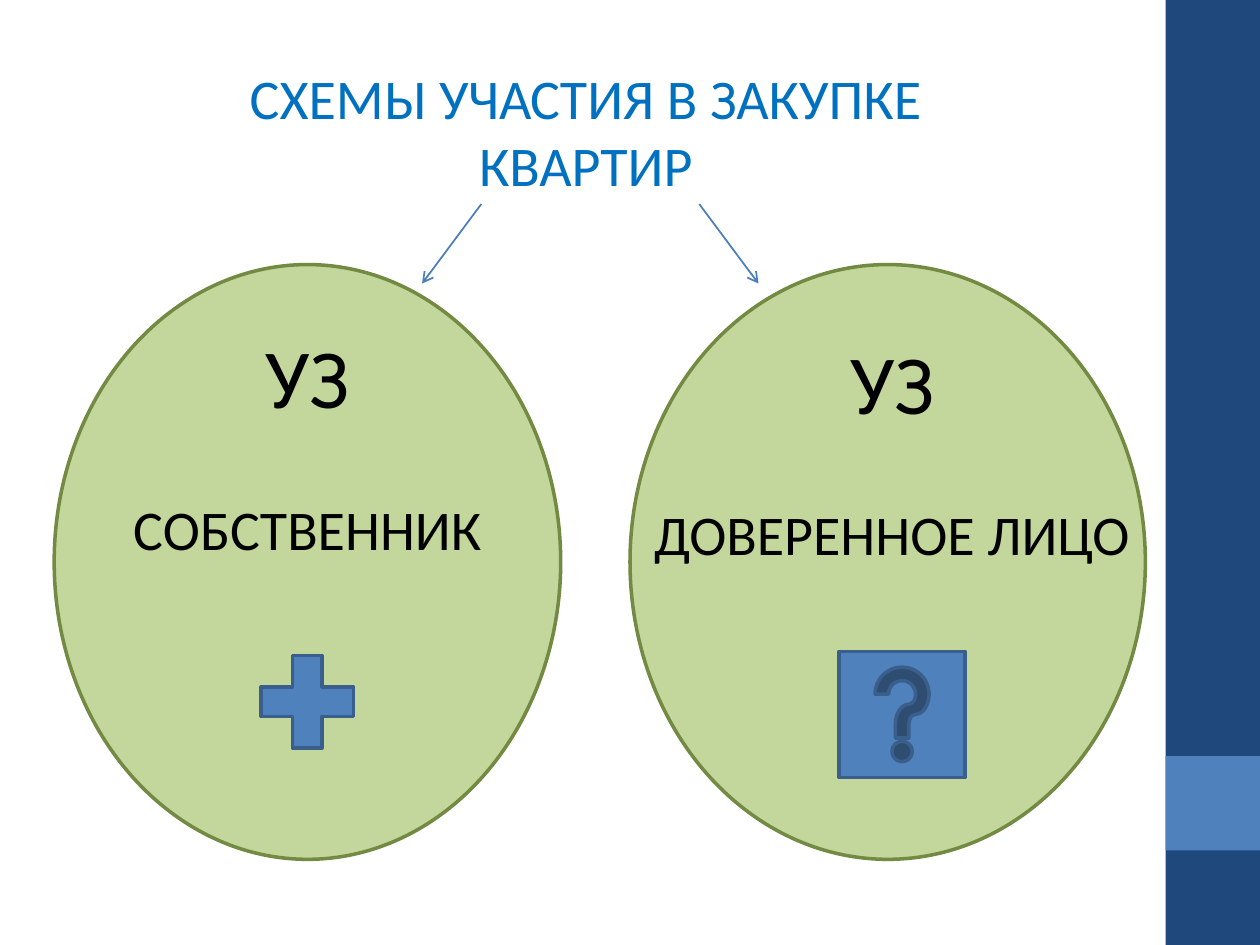
from typing import NamedTuple

from lxml import etree
from pptx import Presentation
from pptx.dml.color import RGBColor
from pptx.enum import shapes, text
from pptx.oxml.ns import qn
from pptx.util import Inches, Pt

COLS, ROWS = 100, 75
KIND = shapes.MSO_SHAPE
FONT = "Calibri"


class Box(NamedTuple):
    col: float
    row: float
    wide: float
    high: float


class Form(NamedTuple):
    kind: int
    box: Box
    fill: str
    edge: str = ""


class Arrow(NamedTuple):
    start: tuple[float, float]
    end: tuple[float, float]


class Label(NamedTuple):
    box: Box
    head: str
    role: str


FORMS = [
    Form(KIND.RECTANGLE, Box(92.5, 0, 7.5, 75), "1F497D"),
    Form(KIND.RECTANGLE, Box(92.5, 60, 7.5, 7.5), "4F81BD"),
    Form(KIND.OVAL, Box(50, 21, 40.9, 47.2), "C3D69B", "738A42"),
    Form(KIND.OVAL, Box(4.3, 21, 40.2, 47.2), "C3D69B", "738A42"),
    Form(KIND.MATH_PLUS, Box(19.4, 50.7, 10, 10), "4F81BD", "3A5F8C"),
    Form(KIND.ACTION_BUTTON_HELP, Box(66.6, 51.7, 10, 10), "4F81BD", "3A5F8C"),
]
ARROWS = [Arrow((55.5, 16.2), (60.2, 22.5)), Arrow((38.2, 16.2), (33.5, 22.5))]
LABELS = [
    Label(Box(6.7, 25.3, 35.4, 19.9), "УЗ", "СОБСТВЕННИК"),
    Label(Box(48.4, 25.7, 44.8, 19.9), "УЗ", "ДОВЕРЕННОЕ ЛИЦО"),
]
TITLE = Box(14.6, 4.5, 63.8, 11.8)

deck = Presentation()
deck.slide_width, deck.slide_height = Inches(10), Inches(7.5)
slide = deck.slides.add_slide(deck.slide_layouts[5])


def tint(code: str) -> RGBColor:
    return RGBColor.from_string(code)


def spot(col: float, row: float) -> tuple[int, int]:
    """Turn grid columns and rows into slide lengths."""
    return int(deck.slide_width * col / COLS), int(deck.slide_height * row / ROWS)


def place(box: Box) -> tuple[int, int, int, int]:
    return spot(box.col, box.row) + spot(box.wide, box.high)


def draw(form: Form) -> None:
    item = slide.shapes.add_shape(form.kind, *place(form.box))
    item.shadow.inherit = False
    item.fill.solid()
    item.fill.fore_color.rgb = tint(form.fill)
    if form.edge:
        item.line.color.rgb = tint(form.edge)
        item.line.width = Pt(2)
    else:
        item.line.fill.background()


def point(arrow: Arrow) -> None:
    line = slide.shapes.add_connector(
        shapes.MSO_CONNECTOR.STRAIGHT, *spot(*arrow.start), *spot(*arrow.end))
    line.line.color.rgb = tint("4B7EBC")
    line.line.width = Pt(1)
    etree.SubElement(line.line._get_or_add_ln(), qn("a:tailEnd"), type="arrow")
    etree.SubElement(line._element.spPr, qn("a:effectLst"))


def setup(frame) -> None:
    look = {"word_wrap": True, "auto_size": text.MSO_AUTO_SIZE.NONE,
            "vertical_anchor": text.MSO_ANCHOR.TOP}
    for key, value in look.items():
        setattr(frame, key, value)


def write(para, words: str, size: int, code: str, gap: int = 0) -> None:
    para.alignment = text.PP_ALIGN.CENTER
    para.space_before = Pt(gap)
    run = para.add_run()
    run.text = words
    for key, value in {"name": FONT, "size": Pt(size)}.items():
        setattr(run.font, key, value)
    run.font.color.rgb = tint(code)


def tag(label: Label) -> None:
    frame = slide.shapes.add_textbox(*place(label.box)).text_frame
    setup(frame)
    write(frame.paragraphs[0], label.head, 48, "000000")
    write(frame.add_paragraph(), label.role, 32, "000000", gap=39)


def main() -> None:
    title = slide.shapes.title
    title.left, title.top, title.width, title.height = place(TITLE)
    setup(title.text_frame)
    write(title.text_frame.paragraphs[0], "СХЕМЫ УЧАСТИЯ В ЗАКУПКЕ КВАРТИР",
          32, "0070C0")
    for form in FORMS:
        draw(form)
    for arrow in ARROWS:
        point(arrow)
    for label in LABELS:
        tag(label)
    deck.save("out.pptx")


if __name__ == "__main__":
    main()
